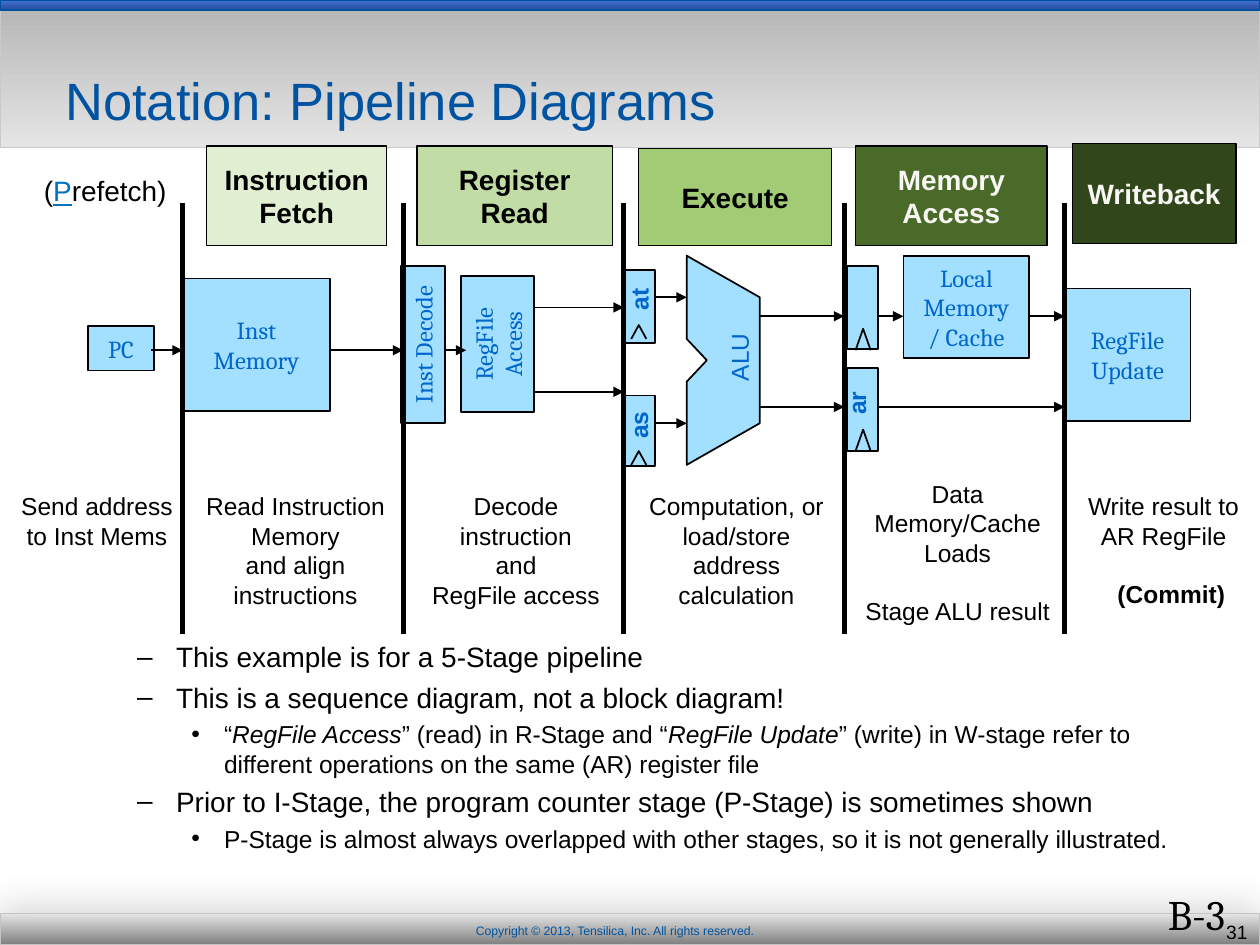
from dataclasses import dataclass

from lxml import etree
from pptx import Presentation
from pptx.dml.color import RGBColor
from pptx.enum.shapes import MSO_CONNECTOR, MSO_SHAPE
from pptx.enum.text import MSO_ANCHOR, PP_ALIGN
from pptx.oxml.ns import qn
from pptx.util import Inches, Pt

LEFT, CENTER, RIGHT = PP_ALIGN.LEFT, PP_ALIGN.CENTER, PP_ALIGN.RIGHT
TOP, MIDDLE, BOTTOM = MSO_ANCHOR.TOP, MSO_ANCHOR.MIDDLE, MSO_ANCHOR.BOTTOM
RECTANGLE = MSO_SHAPE.RECTANGLE
STRAIGHT = MSO_CONNECTOR.STRAIGHT


@dataclass(frozen=True)
class Theme:
    sans: str = "Arial"
    serif: str = "Cambria"
    ink: str = "000000"
    pale_ink: str = "F8F7F4"
    title: str = "0053A0"
    footer: str = "00539E"
    accent: str = "0070C0"
    block_fill: str = "A3E0FF"
    block_ink: str = "0066CC"
    title_size: float = 30
    page_size: float = 24
    heading_size: float = 16
    body_size: float = 14
    number_size: float = 11
    footer_size: float = 7


THEME = Theme()


@dataclass(frozen=True)
class Box:
    left: float
    top: float
    width: float
    height: float


@dataclass(frozen=True)
class Label:
    text: str
    size: float = THEME.body_size
    color: str = THEME.ink
    font: str = THEME.sans
    bold: bool = False
    align: PP_ALIGN = CENTER
    anchor: MSO_ANCHOR = TOP
    wrap: bool = True
    rotation: float = 0
    inset: float = 0.1


@dataclass(frozen=True)
class Band:
    box: Box
    top_color: str
    bottom_color: str
    line: str


@dataclass(frozen=True)
class Bullet:
    segments: tuple[str, ...]
    detail: bool = False


def block_label(text: str, rotation: float = 0) -> Label:
    return Label(text, color=THEME.block_ink, font=THEME.serif, anchor=MIDDLE, rotation=rotation)


def register_label(text: str, align: PP_ALIGN = CENTER, inset: float = 0.1) -> Label:
    return Label(text, color=THEME.block_ink, bold=True, align=align, rotation=270, inset=inset)


def stage_label(text: str, color: str = THEME.ink) -> Label:
    return Label(text, THEME.heading_size, color, bold=True, anchor=MIDDLE)


BANDS = [
    Band(Box(0, 0, 10, 1.17), "B4B4B4", "E5E5E5", "CACACA"),
    Band(Box(0, 7.25, 10, 0.25), "E5E5E5", "7F7F7F", "C4C4C4"),
    Band(Box(0, 0, 10, 0.08), "4074D6", "2B4C9A", "00519E"),
]
BLOCKS = [
    (Box(2.73, 2.56, 1.25, 0.35), block_label("Inst Decode", 270)),
    (Box(3.41, 2.44, 1.08, 0.58), block_label("RegFile\nAccess", 270)),
    (Box(8.45, 2.29, 1, 1.05), block_label("RegFile\nUpdate")),
    (Box(1.45, 2.21, 1.17, 1.05), block_label("Inst\nMemory")),
    (Box(0.7, 2.59, 0.52, 0.35), block_label("PC")),
    (Box(7.17, 2.03, 1, 0.81), block_label("Local Memory / Cache")),
]
REGISTERS = [
    Box(4.95, 2.14, 0.25, 0.58), Box(4.95, 3.14, 0.25, 0.56),
    Box(6.72, 2.11, 0.25, 0.66), Box(6.72, 2.92, 0.25, 0.66),
]
CLOCK_MARKS = [
    Box(5.01, 2.58, 0.12, 0.11), Box(5.01, 3.58, 0.12, 0.11),
    Box(6.79, 2.61, 0.12, 0.17), Box(6.79, 3.41, 0.12, 0.17),
]
ALU_OUTLINE = [(5.45, 2.69), (5.61, 2.86), (5.45, 3.03), (5.45, 3.69),
               (6.03, 3.36), (6.03, 2.36), (5.45, 2.03)]
ARROWS = [
    (1.2, 1.45, 2.78), (2.61, 3.2, 2.78), (3.53, 3.7, 2.78),
    (4.24, 4.95, 2.44), (4.24, 4.95, 3.11), (5.2, 5.45, 2.36), (5.2, 5.45, 3.36),
    (6.03, 6.7, 2.51), (6.03, 6.7, 3.23), (6.97, 7.17, 2.51),
    (6.97, 8.45, 3.23), (8.17, 8.45, 2.51),
]
STAGE_START, STAGE_PITCH, STAGE_BARS = 1.45, 1.75, 5
STAGES = [
    (Box(1.64, 1.16, 1.43, 0.79), "E0EED1", stage_label("Instruction Fetch")),
    (Box(3.31, 1.16, 1.55, 0.79), "C1DCA4", stage_label("Register Read")),
    (Box(5.07, 1.18, 1.53, 0.77), "A2CB76", stage_label("Execute")),
    (Box(6.79, 1.16, 1.52, 0.79), "4A6A29", stage_label("Memory Access", THEME.pale_ink)),
    (Box(8.51, 1.14, 1.3, 0.79), "31461B", stage_label("Writeback", THEME.pale_ink)),
]
TEXTS = [
    (Box(2.92, 7.28, 3.92, 0.22), Label("Copyright © 2013, Tensilica, Inc. All rights reserved.",
                                        THEME.footer_size, THEME.footer)),
    (Box(9.21, 7.25, 0.79, 0.29), Label("31", THEME.number_size, align=RIGHT, anchor=MIDDLE)),
    (Box(9.17, 7, 0.75, 0.33), Label("B-31", THEME.page_size, font=THEME.serif, align=LEFT)),
    (Box(0.42, 0.17, 8.33, 0.92), Label("Notation: Pipeline Diagrams", THEME.title_size,
                                        THEME.title, align=LEFT, anchor=BOTTOM)),
    (Box(5.55, 2.67, 0.63, 0.33), Label("ALU", color=THEME.block_ink, rotation=270)),
    (Box(4.83, 3.18, 0.47, 0.33), register_label("as", LEFT)),
    (Box(4.85, 2.21, 0.44, 0.33), register_label("at")),
    (Box(6.44, 3.03, 0.72, 0.34), register_label("ar", inset=0.01)),
    (Box(0.06, 3.85, 1.42, 0.8), Label("Send address to Inst Mems")),
    (Box(1.47, 3.85, 1.75, 1.28), Label("Read Instruction Memory\nand align\ninstructions")),
    (Box(3.22, 3.85, 1.75, 1.04), Label("Decode instruction\nand\nRegFile access")),
    (Box(4.97, 3.85, 1.75, 1.04), Label("Computation, or load/store address calculation")),
    (Box(8.47, 3.85, 1.53, 0.57), Label("Write result to\vAR RegFile")),
    (Box(8.77, 4.55, 1.06, 0.34), Label("(Commit)", bold=True, align=LEFT, wrap=False)),
]
BULLETS = [
    Bullet(("This example is for a 5-Stage pipeline",)),
    Bullet(("This is a sequence diagram, not a block diagram!",)),
    Bullet(("“", "RegFile Access", "” (read) in R-Stage and “", "RegFile Update",
            "” (write) in W-stage refer to different operations on the same (AR) register file"), True),
    Bullet(("Prior to I-Stage, the program counter stage (P-Stage) is sometimes shown",)),
    Bullet(("P-Stage is almost always overlapped with other stages, "
            "so it is not generally illustrated.",), True),
]


def lengths(box: Box) -> tuple:
    return Inches(box.left), Inches(box.top), Inches(box.width), Inches(box.height)


def rgb(color: str) -> RGBColor:
    return RGBColor.from_string(color)


def style_font(font, size: float, color: str, name: str = THEME.sans, bold: bool = False) -> None:
    font.size, font.name, font.bold = Pt(size), name, bold
    font.color.rgb = rgb(color)


def write_label(shape, label: Label) -> None:
    shape.rotation = label.rotation
    frame = shape.text_frame
    frame.text = label.text
    frame.word_wrap = label.wrap
    frame.vertical_anchor = label.anchor
    frame.margin_left = frame.margin_right = Inches(label.inset)
    for paragraph in frame.paragraphs:
        paragraph.alignment = label.align
        for run in paragraph.runs:
            style_font(run.font, label.size, label.color, label.font, label.bold)


def add_text(slide, box: Box, label: Label):
    shape = slide.shapes.add_textbox(*lengths(box))
    write_label(shape, label)
    return shape.text_frame


def outline(shape, color: str = THEME.ink, width: float = 1) -> None:
    shape.shadow.inherit = False
    shape.line.color.rgb = rgb(color)
    shape.line.width = Pt(width)


def add_block(slide, box: Box, fill: str = THEME.block_fill, width: float = 1):
    shape = slide.shapes.add_shape(RECTANGLE, *lengths(box))
    outline(shape, width=width)
    shape.fill.solid()
    shape.fill.fore_color.rgb = rgb(fill)
    return shape


def add_band(slide, band: Band) -> None:
    shape = slide.shapes.add_shape(RECTANGLE, *lengths(band.box))
    outline(shape, band.line, 0.75)
    shape.fill.gradient()
    shape.fill.gradient_angle = 270
    for stop, color in zip(shape.fill.gradient_stops, (band.top_color, band.bottom_color)):
        stop.color.rgb = rgb(color)
    if band.box.top > 0:
        effects = shape.element.spPr.find(qn("a:effectLst"))
        shadow = etree.SubElement(effects, qn("a:outerShdw"), blurRad=str(Pt(20.8)),
                                  dist=str(Pt(3)), dir="15480000", rotWithShape="0")
        color = etree.SubElement(shadow, qn("a:srgbClr"), val="808080")
        etree.SubElement(color, qn("a:alpha"), val="36000")


def add_outline(slide, points: list, closed: bool):
    start, *rest = [(Inches(x), Inches(y)) for x, y in points]
    builder = slide.shapes.build_freeform(*start, scale=1.0)
    builder.add_line_segments(rest, close=closed)
    shape = builder.convert_to_shape()
    outline(shape)
    if closed:
        shape.fill.solid()
        shape.fill.fore_color.rgb = rgb(THEME.block_fill)
    else:
        shape.fill.background()


def add_line(slide, start: tuple, end: tuple, width: float, arrow: bool) -> None:
    line = slide.shapes.add_connector(STRAIGHT, *map(Inches, start + end))
    line.line.color.rgb = rgb(THEME.ink)
    line.line.width = Pt(width)
    if arrow:
        etree.SubElement(line.line._get_or_add_ln(), qn("a:tailEnd"), type="triangle")
    etree.SubElement(line._element.spPr, qn("a:effectLst"))


def add_bullets(slide, box: Box) -> None:
    frame = slide.shapes.add_textbox(*lengths(box)).text_frame
    frame.word_wrap = True
    for index, bullet in enumerate(BULLETS):
        paragraph = frame.add_paragraph() if index else frame.paragraphs[0]
        size = THEME.body_size if bullet.detail else THEME.heading_size
        margin, hang = (1.07, 0.26) if bullet.detail else (0.69, 0.31)
        paragraph.level = 2 if bullet.detail else 1
        if index:
            paragraph.space_before = Pt(round(size * 0.23, 1))
        properties = paragraph._p.get_or_add_pPr()
        properties.set("marL", str(Inches(margin)))
        properties.set("indent", str(-Inches(hang)))
        etree.SubElement(properties, qn("a:buFont"), typeface=THEME.sans)
        etree.SubElement(properties, qn("a:buChar"), char="•" if bullet.detail else "–")
        for position, segment in enumerate(bullet.segments):
            run = paragraph.add_run()
            run.text = segment
            style_font(run.font, size, THEME.ink)
            run.font.italic = position % 2 == 1


def add_prefetch(slide) -> None:
    frame = add_text(slide, Box(0.24, 1.33, 1.19, 0.37), Label("", wrap=False))
    for segment in ("(", "P", "refetch)"):
        run = frame.paragraphs[0].add_run()
        run.text = segment
        linked = segment == "P"
        style_font(run.font, THEME.heading_size, THEME.accent if linked else THEME.ink)
        run.font.underline = linked


def main() -> None:
    presentation = Presentation()
    presentation.slide_width, presentation.slide_height = Inches(10), Inches(7.5)
    slide = presentation.slides.add_slide(presentation.slide_layouts[6])
    for band in BANDS:
        add_band(slide, band)
    for box, label in BLOCKS:
        write_label(add_block(slide, box), label)
    for box in REGISTERS:
        add_block(slide, box)
    add_outline(slide, ALU_OUTLINE, True)
    for mark in CLOCK_MARKS:
        bottom, right = mark.top + mark.height, mark.left + mark.width
        add_outline(slide, [(mark.left, bottom), (mark.left + mark.width / 2, mark.top),
                            (right, bottom)], False)
    for index in range(STAGE_BARS):
        x = STAGE_START + index * STAGE_PITCH
        add_line(slide, (x, 1.61), (x, 5.03), 3, False)
    for start, end, y in ARROWS:
        add_line(slide, (start, y), (end, y), 1, True)
    for box, fill, label in STAGES:
        write_label(add_block(slide, box, fill, 0.75), label)
    for box, label in TEXTS:
        frame = add_text(slide, box, label)
        if label.size == THEME.title_size:
            frame.paragraphs[0].line_spacing = Pt(THEME.title_size)
    memory = add_text(slide, Box(6.64, 3.75, 1.92, 1.28),
                      Label("Data Memory/Cache Loads\nStage ALU result"))
    memory.paragraphs[1].space_before = Pt(16.8)
    add_prefetch(slide)
    add_bullets(slide, Box(0.61, 5.03, 8.84, 2.22))
    presentation.save("out.pptx")


if __name__ == "__main__":
    main()
